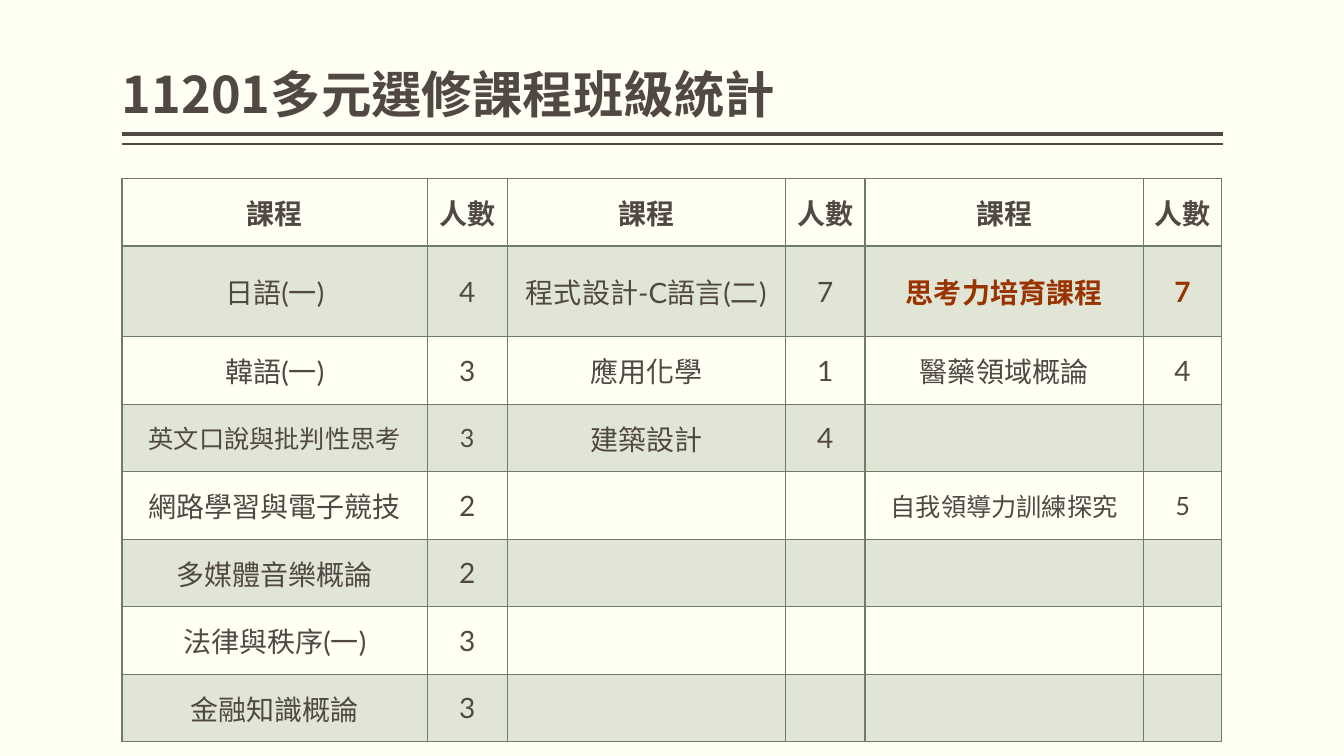
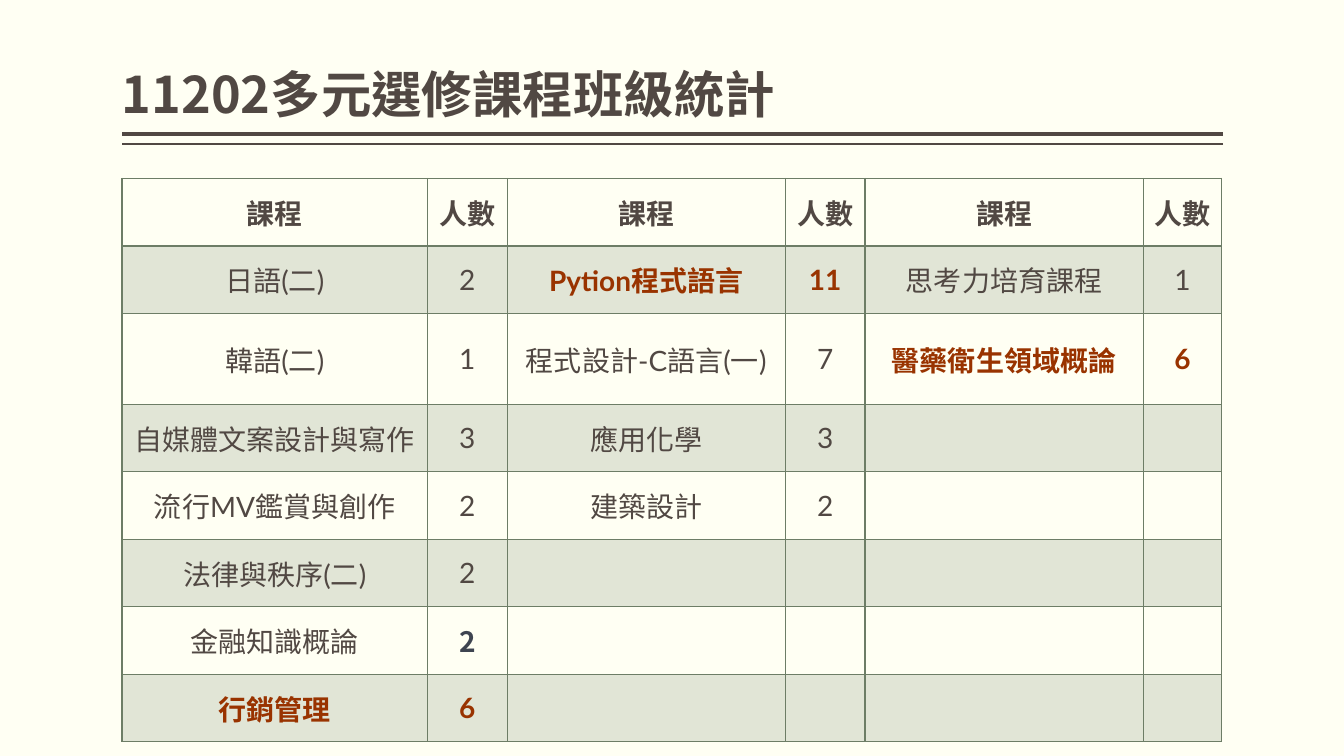
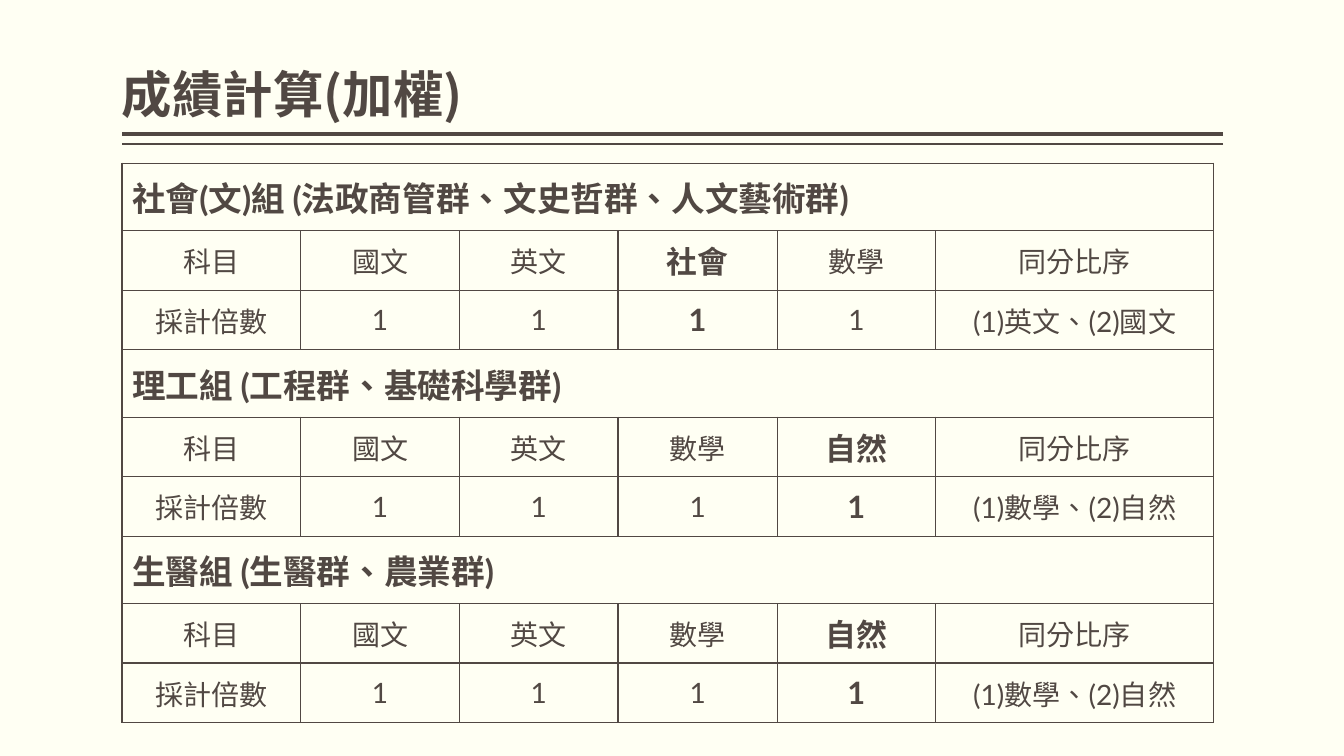
from lxml.etree import SubElement
from pptx import Presentation
from pptx.dml.color import RGBColor
from pptx.enum.shapes import MSO_CONNECTOR
from pptx.enum.text import MSO_ANCHOR, PP_ALIGN
from pptx.oxml.ns import qn
from pptx.util import Inches, Pt

PAPER, INK, SAGE, RUST, SLATE = "FFFFF3", "514843", "6D7D66", "993300", "3E4450"
LATIN, CJK, CJK_SC = "Lato", "Noto Sans CJK TC", "Noto Sans CJK SC"
LEFT, RIGHT = 1.21, 12.13

# Each style: (format of the course, format of its count)
PLAIN = ({}, {})
POPULAR = ({"color": RUST, "bold": True},) * 2
SMALL = ({"size": 18},) * 2
DARK_COUNT = ({}, {"color": SLATE, "bold": True, "font": CJK_SC})

# Each course column lists (course, count, style) from the top; None is a gap
CLASS_STATISTICS = [
    ("11201多元選修課程班級統計", [
        [("日語(一)", 4, PLAIN), ("韓語(一)", 3, PLAIN),
         ("英文口說與批判性思考", 3, SMALL), ("網路學習與電子競技", 2, PLAIN),
         ("多媒體音樂概論", 2, PLAIN), ("法律與秩序(一)", 3, PLAIN),
         ("金融知識概論", 3, PLAIN)],
        [("程式設計-C語言(二)", 7, PLAIN), ("應用化學", 1, PLAIN),
         ("建築設計", 4, PLAIN)],
        [("思考力培育課程", 7, POPULAR), ("醫藥領域概論", 4, PLAIN), None,
         ("自我領導力訓練探究", 5, SMALL)],
    ]),
    ("11202多元選修課程班級統計", [
        [("日語(二)", 2, PLAIN), ("韓語(二)", 1, PLAIN),
         ("自媒體文案設計與寫作", 3, PLAIN), ("流行MV鑑賞與創作", 2, PLAIN),
         ("法律與秩序(二)", 2, PLAIN), ("金融知識概論", 2, DARK_COUNT),
         ("行銷管理", 6, POPULAR)],
        [("Pytion程式語言", 11, POPULAR), ("程式設計-C語言(一)", 7, PLAIN),
         ("應用化學", 3, PLAIN), ("建築設計", 2, PLAIN)],
        [("思考力培育課程", 1, PLAIN), ("醫藥衛生領域概論", 6, POPULAR)],
    ]),
]
STATISTICS_WIDTHS = [3.03, 0.79, 2.76, 0.79, 2.76, 0.78]
STATISTICS_ROWS = 8
ONE_LINE_ROW, TWO_LINE_ROW = 0.67, 0.9
ONE_LINE_CHARACTERS = 10

WEIGHTING_TITLE = "成績計算(加權)"
# (group, subjects, emphasised subject, order for breaking ties)
WEIGHTINGS = [
    ("社會(文)組 (法政商管群、文史哲群、人文藝術群)",
     ["國文", "英文", "社會", "數學"], "社會", "(1)英文、(2)國文"),
    ("理工組 (工程群、基礎科學群)",
     ["國文", "英文", "數學", "自然"], "自然", "(1)數學、(2)自然"),
    ("生醫組 (生醫群、農業群)",
     ["國文", "英文", "數學", "自然"], "自然", "(1)數學、(2)自然"),
]
WEIGHTING_WIDTHS = [1.77, 1.58, 1.57, 1.58, 1.57, 2.76]


def rgb(color):
    return RGBColor.from_string(color)


def write(frame, text, size=20, color=INK, bold=False, font=LATIN,
          align=PP_ALIGN.CENTER):
    frame.text = text
    paragraph = frame.paragraphs[0]
    paragraph.alignment = align
    for run in paragraph.runs:
        run.font.size = Pt(size)
        run.font.bold = bold
        run.font.color.rgb = rgb(color)
        run.font.name = font
        properties = run.font._element
        properties.set("lang", "zh-TW")
        SubElement(properties, qn("a:ea"), typeface=CJK)


def add_rule(slide, y, weight):
    rule = slide.shapes.add_connector(
        MSO_CONNECTOR.STRAIGHT, Inches(RIGHT), Inches(y), Inches(LEFT), Inches(y))
    rule.line.color.rgb = rgb(INK)
    rule.line.width = Pt(weight)
    SubElement(rule._element.spPr, qn("a:effectLst"))


def add_titled_slide(prs, title):
    slide = prs.slides.add_slide(prs.slide_layouts[6])
    add_rule(slide, 1.33, 3)
    add_rule(slide, 1.43, 1)
    heading = slide.shapes.add_textbox(
        Inches(LEFT), Inches(0.08), Inches(RIGHT - LEFT), Inches(1.2)).text_frame
    heading.word_wrap = True
    heading.vertical_anchor = MSO_ANCHOR.BOTTOM
    heading.margin_left = heading.margin_right = 0
    write(heading, title, 36, bold=True, font=CJK, align=PP_ALIGN.LEFT)
    return slide


def set_borders(cell, color, bottom=1):
    properties = cell._tc.get_or_add_tcPr()
    for side, weight in (("L", 1), ("R", 1), ("T", 1), ("B", bottom)):
        line = SubElement(properties, qn(f"a:ln{side}"), w=str(Pt(weight)))
        fill = SubElement(line, qn("a:solidFill"))
        SubElement(fill, qn("a:srgbClr"), val=color)


def tint(cell, color, percent):
    """Fill the cell with a colour of the given opacity."""
    cell.fill.solid()
    cell.fill.fore_color.rgb = rgb(color)
    fill = cell._tc.tcPr.find(qn("a:solidFill"))
    SubElement(fill[0], qn("a:alpha"), val=str(percent * 1000))


def add_grid(slide, top, widths, heights, border, header_bottom=1):
    """Add a table with ruled, unfilled cells."""
    table = slide.shapes.add_table(
        len(heights), len(widths), Inches(LEFT), Inches(top),
        Inches(sum(widths)), Inches(sum(heights))).table
    table.first_row = table.horz_banding = False
    for column, width in zip(table.columns, widths):
        column.width = Inches(width)
    for index, (row, height) in enumerate(zip(table.rows, heights)):
        row.height = Inches(height)
        for cell in row.cells:
            cell.vertical_anchor = MSO_ANCHOR.MIDDLE
            set_borders(cell, border, 1 if index else header_bottom)
            cell.fill.background()
    return table


def statistics_heights(course_columns):
    """Give a row room for two lines where a course name wraps."""
    heights = [ONE_LINE_ROW] * STATISTICS_ROWS
    for courses in course_columns:
        for row, entry in enumerate(courses, start=1):
            if entry and len(entry[0]) > ONE_LINE_CHARACTERS:
                heights[row] = TWO_LINE_ROW
    return heights


def add_statistics_slide(prs, title, course_columns):
    slide = add_titled_slide(prs, title)
    table = add_grid(slide, 1.77, STATISTICS_WIDTHS,
                     statistics_heights(course_columns), SAGE, header_bottom=2)
    for row in range(1, STATISTICS_ROWS, 2):
        for cell in table.rows[row].cells:
            tint(cell, SAGE, 20)
    for group, courses in enumerate(course_columns):
        left = 2 * group
        for offset, label in enumerate(("課程", "人數")):
            write(table.cell(0, left + offset).text_frame, label, bold=True)
        for row, entry in enumerate(courses, start=1):
            if entry:
                course, count, (course_style, count_style) = entry
                write(table.cell(row, left).text_frame, course, **course_style)
                write(table.cell(row, left + 1).text_frame, str(count), **count_style)


def add_weighting_slide(prs):
    slide = add_titled_slide(prs, WEIGHTING_TITLE)
    table = add_grid(slide, 1.62, WEIGHTING_WIDTHS,
                     [0.67, 0.59, 0.59] * len(WEIGHTINGS), INK)
    for index, (group, subjects, emphasised, tie_order) in enumerate(WEIGHTINGS):
        top = 3 * index
        banner = table.cell(top, 0)
        banner.merge(table.cell(top, len(WEIGHTING_WIDTHS) - 1))
        write(banner.text_frame, group, 24, bold=True, align=PP_ALIGN.LEFT)
        names = ["科目", *subjects, "同分比序"]
        weights = ["採計倍數", *["1"] * len(subjects), tie_order]
        for column, pair in enumerate(zip(names, weights)):
            strong = names[column] == emphasised
            for row, text in enumerate(pair, start=top + 1):
                write(table.cell(row, column).text_frame, text,
                      22 if strong else 20, bold=strong)


def main():
    prs = Presentation()
    prs.slide_width, prs.slide_height = Inches(13.33), Inches(7.5)
    background = prs.slide_master.background.fill
    background.solid()
    background.fore_color.rgb = rgb(PAPER)
    for title, course_columns in CLASS_STATISTICS:
        add_statistics_slide(prs, title, course_columns)
    add_weighting_slide(prs)
    prs.save("out.pptx")


if __name__ == "__main__":
    main()
